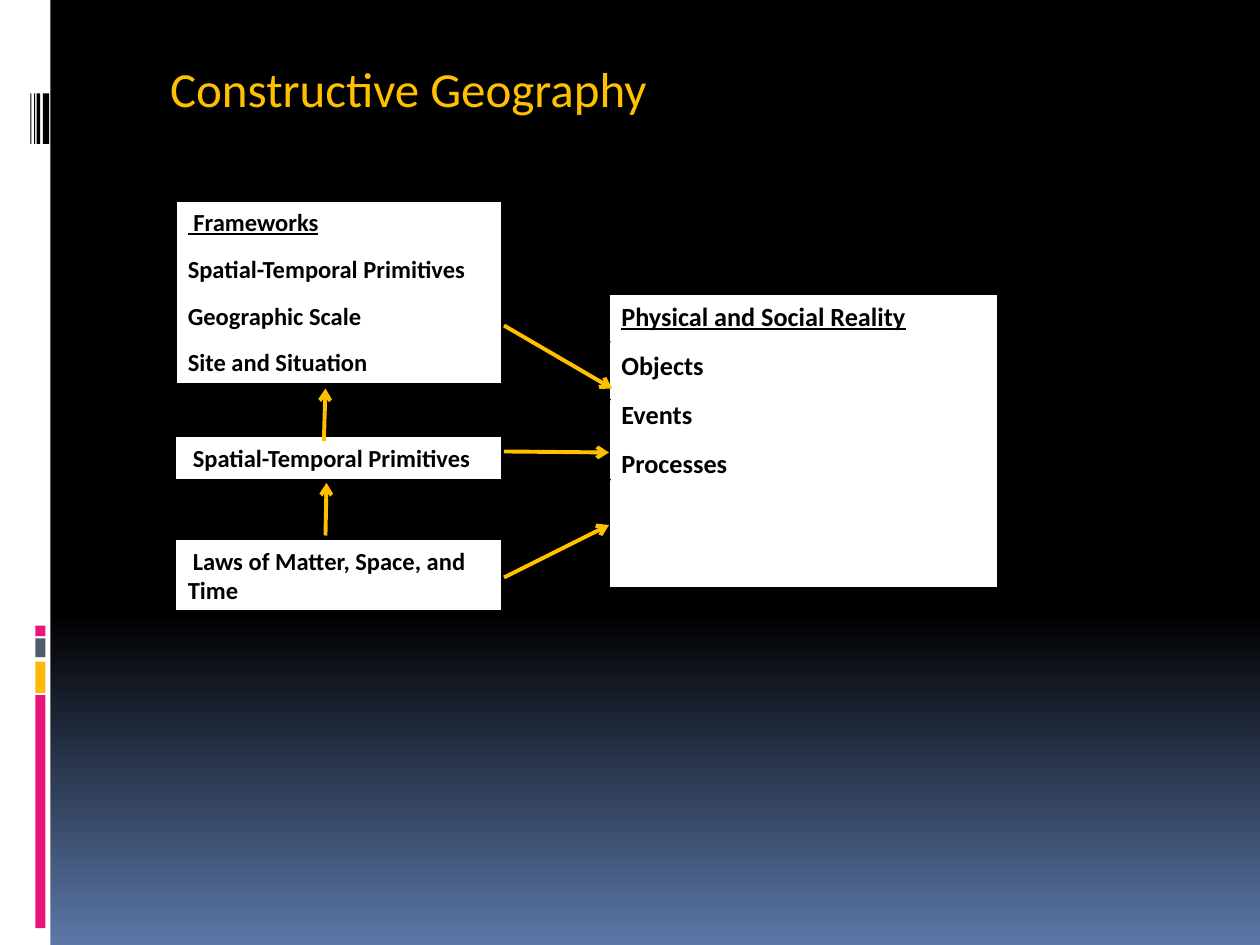
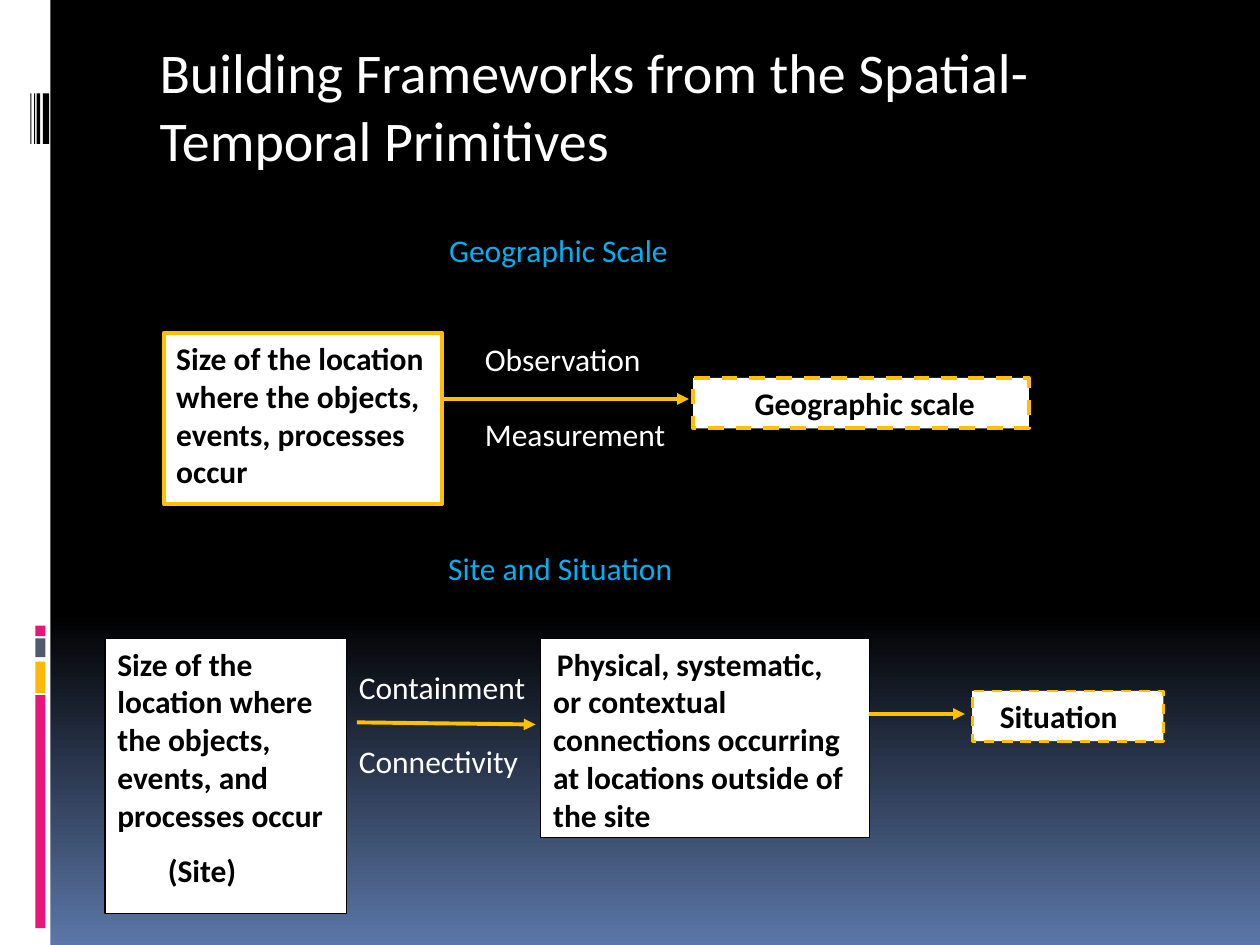
from pptx import Presentation
from pptx import util as u
from pptx.dml.color import RGBColor
from pptx.enum import dml, shapes, text
from pptx.oxml.ns import qn
from lxml import etree

BLACK = RGBColor(0x00, 0x00, 0x00)
WHITE = RGBColor(0xFF, 0xFF, 0xFF)
STEEL = RGBColor(0x5B, 0x77, 0xA8)
SLATE = RGBColor(0x4E, 0x5B, 0x6F)
PINK = RGBColor(0xEA, 0x15, 0x7A)
AMBER = RGBColor(0xFE, 0xB8, 0x0A)
GOLD = RGBColor(0xFF, 0xC0, 0x00)
SKY = RGBColor(0x00, 0xB0, 0xF0)

FONT = "Calibri"
COLS, ROWS = 120, 90  # twelve grid cells to the inch
TITLE_ONLY = 5


def write(p, words, size=18, color=BLACK, bold=False, underline=False,
          after=0, indent=0):
    """Fill paragraph p; after is in points, indent (first line) in inches."""
    r = p.add_run()
    r.text = words
    f = r.font
    f.name, f.size, f.bold, f.underline = FONT, u.Pt(size), bold, underline
    f.color.rgb = color
    p.alignment = text.PP_ALIGN.LEFT
    p.space_after = u.Pt(after)
    if indent:
        p._p.get_or_add_pPr().set("indent", str(u.Inches(indent)))


class Deck:
    """Holds the shared style and the current slide; lengths are grid cells."""

    def __init__(self):
        self.prs = Presentation()
        self.prs.slide_width, self.prs.slide_height = u.Inches(10), u.Inches(7.5)
        self.col = self.prs.slide_width / COLS
        self.row = self.prs.slide_height / ROWS
        fill = self.prs.slide_master.background.fill
        fill.gradient()
        fill.gradient_angle = 270
        for stop, place, color in zip(fill.gradient_stops, (0.65, 1), (BLACK, STEEL)):
            stop.position, stop.color.rgb = place, color

    def grid(self, x, y, *rest):
        """Turn x, y pairs of grid cells into slide lengths."""
        cells = (x, y) + rest
        return [u.Emu(round(c * (self.row if i % 2 else self.col)))
                for i, c in enumerate(cells)]

    def slide(self, title, at, size, color):
        self.s = self.prs.slides.add_slide(self.prs.slide_layouts[TITLE_ONLY])
        self.rail()
        sp = self.s.shapes.title
        sp.left, sp.top, sp.width, sp.height = self.grid(*at)
        self.fill_text(sp, [(title, {})], size=size, color=color)

    def rail(self):
        """White side band with its barcode and coloured blocks."""
        self.rect((0, 0, 4.8, 90), WHITE)
        for x, w in ((4.08, 0.6), (3.48, 0.36), (3.24, 0.12), (2.88, 0.12)):
            self.rect((x, 8.9, w, 4.8), BLACK)
        for y, h, color in ((66.2, 22.2, PINK), (63, 3, AMBER),
                            (60.8, 1.8, SLATE), (59.6, 1, PINK)):
            self.rect((3.36, y, 0.96, h), color)

    def rect(self, at, fill, line=None, width=0.75, dash=False):
        sp = self.s.shapes.add_shape(shapes.MSO_SHAPE.RECTANGLE, *self.grid(*at))
        sp.shadow.inherit = False
        sp.fill.solid()
        sp.fill.fore_color.rgb = fill
        if line is None:
            sp.line.fill.background()
        else:
            sp.line.color.rgb, sp.line.width = line, u.Pt(width)
            if dash:
                sp.line.dash_style = dml.MSO_LINE.DASH
        return sp

    def fill_text(self, sp, paras, **style):
        """Write (words, overrides) pairs into sp, one paragraph each."""
        tf = sp.text_frame
        tf.word_wrap = True
        tf.auto_size = text.MSO_AUTO_SIZE.NONE
        tf.vertical_anchor = text.MSO_ANCHOR.TOP
        for i, (words, own) in enumerate(paras):
            p = tf.add_paragraph() if i else tf.paragraphs[0]
            write(p, words, **{**style, **own})

    def box(self, at, *paras, size=18, line=BLACK, width=0.75, dash=False):
        sp = self.rect(at, WHITE, line, width, dash)
        self.fill_text(sp, paras, size=size, bold=True, after=10)

    def label(self, at, *lines, color=WHITE):
        sp = self.s.shapes.add_textbox(*self.grid(*at))
        self.fill_text(sp, [(words, {}) for words in lines], color=color, after=21)

    def arrow(self, start, end, color=GOLD, width=2.25, head="triangle"):
        c = self.s.shapes.add_connector(shapes.MSO_CONNECTOR.STRAIGHT,
                                        *self.grid(*start, *end))
        c.line.color.rgb, c.line.width = color, u.Pt(width)
        etree.SubElement(c.line._get_or_add_ln(), qn("a:tailEnd"), type=head)
        etree.SubElement(c._element.spPr, qn("a:effectLst"))


def constructive_geography(d):
    d.slide("Constructive Geography", (15, 5, 65, 6.8), 28, GOLD)
    x, w = 16.7, 31.1
    d.box((x, 51.4, w, 6.8),
          ("Laws of Matter, Space, and Time", {"indent": 0.04}), size=14)
    d.box((x, 41.6, w, 4.1),
          ("Spatial-Temporal Primitives", {"indent": 0.04}), size=14)
    d.box((x, 19.1, w, 17.5), (" Frameworks", {"underline": True}),
          ("Spatial-Temporal Primitives", {}), ("Geographic Scale", {}),
          ("Site and Situation", {}), size=14, width=1.5)
    d.box((58, 28, 37, 28), ("Physical and Social Reality", {"underline": True}),
          ("Objects", {}), ("Events", {}), ("Processes", {}), size=15)
    for y1, y2 in ((28.1, 32.6), (44, 38), (53.3, 45.6)):
        d.arrow((47.8, y1), (58.2, y2), BLACK, 0.75)
    for start, end in (((48, 31), (58.3, 37)), ((48, 43), (58, 43.1)),
                       ((48, 55), (58, 50)), ((31, 51), (31.1, 46)),
                       ((30.85, 42), (31, 37))):
        d.arrow(start, end, head="arrow")


def building_frameworks(d):
    d.slide("Building Frameworks from the Spatial-Temporal Primitives",
            (14, 3, 93, 14.2), 32, WHITE)

    d.label((41.6, 21.4, 74, 4.8), "Geographic Scale", color=SKY)
    d.box((15.6, 31.7, 26.5, 16.3),
          ("Size of the location where the objects, events, processes occur", {}),
          line=GOLD, width=2.25)
    d.label((45, 31.8, 21, 12.1), "Observation", "Measurement")
    d.box((66, 36, 32, 4.8), ("Geographic scale", {"indent": 0.39}),
          line=GOLD, width=2.25, dash=True)
    d.arrow((42, 38), (65.6, 38))

    d.label((41.5, 51.7, 45, 4.8), "Site and Situation", color=SKY)
    d.box((10, 60.8, 23, 26.2),
          ("Size of the location where the objects, events, and processes occur", {}),
          ("(Site)", {"indent": 0.4}))
    d.label((33, 63, 36, 12.1), "Containment", "Connectivity")
    d.arrow((34, 68.8), (51, 69))
    d.box((51.5, 60.8, 31.3, 19),
          ("Physical, systematic, or contextual connections occurring "
           "at locations outside of the site", {"indent": 0.03}))
    d.arrow((82.8, 68), (91.9, 68))
    d.box((92.6, 65.8, 18.2, 4.8), ("Situation", {"indent": 0.12}),
          line=GOLD, width=1.5, dash=True)


def main():
    d = Deck()
    constructive_geography(d)
    building_frameworks(d)
    d.prs.save("out.pptx")


if __name__ == "__main__":
    main()
